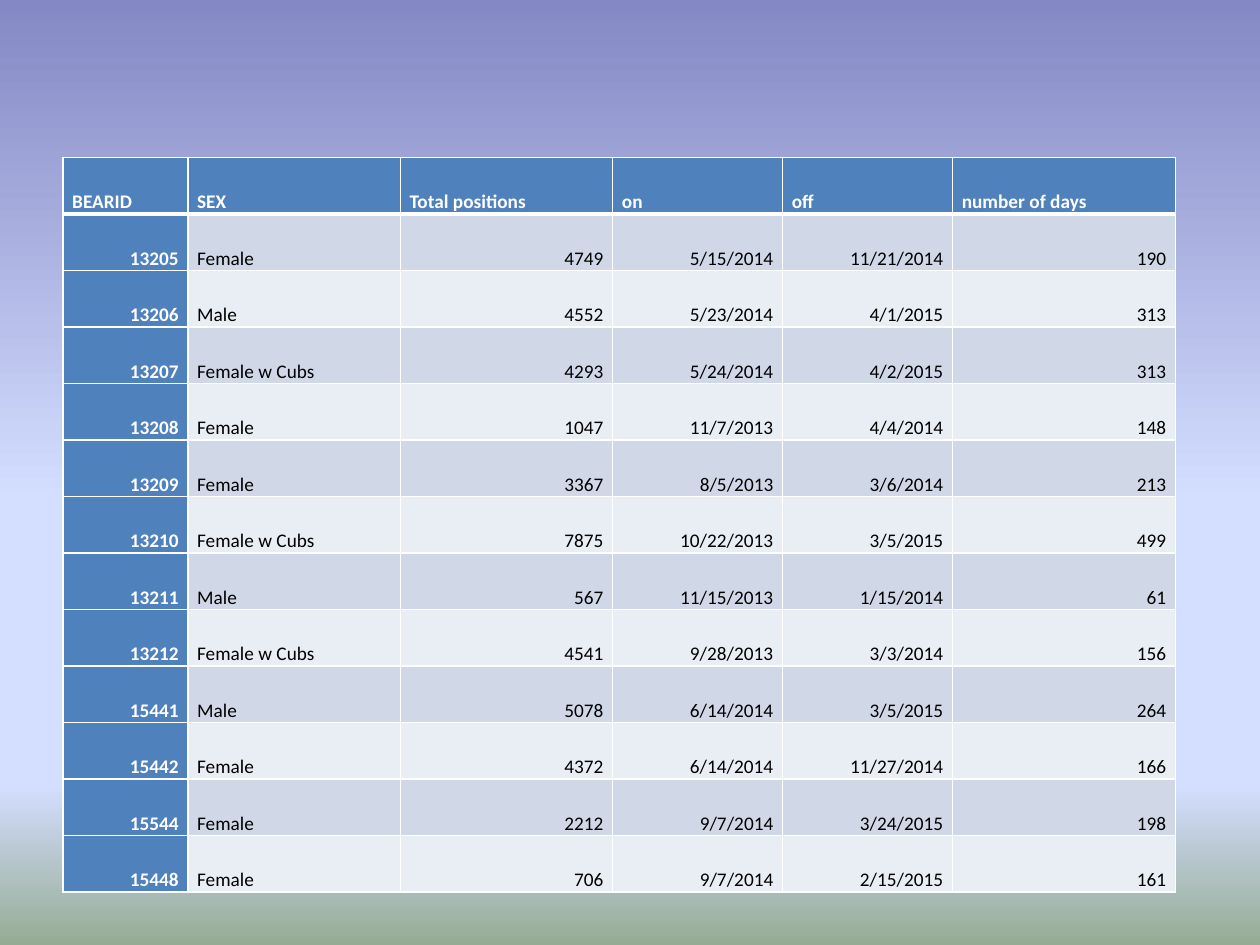
import dataclasses
import typing

import lxml.etree
import pptx
import pptx.dml.color
import pptx.enum.text
import pptx.oxml.ns
import pptx.util

Pt = pptx.util.Pt
qn = pptx.oxml.ns.qn
ALIGN = pptx.enum.text.PP_ALIGN


@dataclasses.dataclass(frozen=True)
class Theme:
    font: str = "Calibri"
    size: float = 11
    head: str = "4F81BD"
    bands: tuple = ("D0D8E8", "E9EDF4")
    light: str = "FFFFFF"
    dark: str = "000000"
    thin: float = 1
    thick: float = 3
    sky: tuple = ((0, "8488C4"), (53, "D4DEFF"), (83, "D4DEFF"), (100, "96AB94"))


class Bear(typing.NamedTuple):
    code: str
    sex: str
    total: str
    start: str
    end: str
    days: str


THEME = Theme()

# Table content and grid
HEADS = Bear("BEARID", "SEX", "Total positions", "on", "off", "number of days")
BEARS = [
    Bear("13205", "Female", "4749", "5/15/2014", "11/21/2014", "190"),
    Bear("13206", "Male", "4552", "5/23/2014", "4/1/2015", "313"),
    Bear("13207", "Female w Cubs", "4293", "5/24/2014", "4/2/2015", "313"),
    Bear("13208", "Female", "1047", "11/7/2013", "4/4/2014", "148"),
    Bear("13209", "Female", "3367", "8/5/2013", "3/6/2014", "213"),
    Bear("13210", "Female w Cubs", "7875", "10/22/2013", "3/5/2015", "499"),
    Bear("13211", "Male", "567", "11/15/2013", "1/15/2014", "61"),
    Bear("13212", "Female w Cubs", "4541", "9/28/2013", "3/3/2014", "156"),
    Bear("15441", "Male", "5078", "6/14/2014", "3/5/2015", "264"),
    Bear("15442", "Female", "4372", "6/14/2014", "11/27/2014", "166"),
    Bear("15544", "Female", "2212", "9/7/2014", "3/24/2015", "198"),
    Bear("15448", "Female", "706", "9/7/2014", "2/15/2015", "161"),
]
WIDTHS = (71.4, 121.4, 121.4, 97.1, 97.1, 127.4)
LEFT, TOP, HEIGHT = 36, 90, 32.3
INSET = 5.3


def rgb(code: str) -> pptx.dml.color.RGBColor:
    return pptx.dml.color.RGBColor.from_string(code)


def add_solid(node, tag: str, code: str, **attrs: str) -> None:
    """Append a tag that holds a solid fill, as used for cell borders."""
    line = lxml.etree.SubElement(node, qn(tag), **attrs)
    fill = lxml.etree.SubElement(line, qn("a:solidFill"))
    lxml.etree.SubElement(fill, qn("a:srgbClr"), val=code)


def write(frame, text: str, *, color: str, bold: bool, align) -> None:
    para = frame.paragraphs[0]
    para.alignment = align
    run = para.add_run()
    run.text = text
    font = run.font
    font.name, font.size, font.bold = THEME.font, Pt(THEME.size), bold
    font.color.rgb = rgb(color)


def paint_sky(slide) -> None:
    fill = slide.background.fill
    fill.gradient()
    fill.gradient_angle = 270
    stops = next(slide.element.iter(qn("a:gsLst")))
    for old in list(stops):
        stops.remove(old)
    for pos, code in THEME.sky:
        stop = lxml.etree.SubElement(stops, qn("a:gs"), pos=str(pos * 1000))
        lxml.etree.SubElement(stop, qn("a:srgbClr"), val=code)


def draw_cell(cell, text: str, row: int, col: int) -> None:
    key = row == 0 or col == 0
    # Borders, with a heavy rule under the header
    sides = {"a:lnL": False, "a:lnR": False, "a:lnT": row == 1, "a:lnB": row == 0}
    props = cell._tc.get_or_add_tcPr()
    for tag, heavy in sides.items():
        width = Pt(THEME.thick if heavy else THEME.thin)
        add_solid(props, tag, THEME.light, w=str(width))
    # Fill and text
    cell.fill.solid()
    cell.fill.fore_color.rgb = rgb(THEME.head if key else THEME.bands[(row - 1) % 2])
    cell.margin_left = cell.margin_right = Pt(INSET)
    cell.margin_top = cell.margin_bottom = Pt(0)
    cell.vertical_anchor = pptx.enum.text.MSO_ANCHOR.BOTTOM
    write(
        cell.text_frame,
        text,
        color=THEME.light if key else THEME.dark,
        bold=key,
        align=ALIGN.LEFT if row == 0 or col == 1 else ALIGN.RIGHT,
    )


def draw_table(slide, rows: list[Bear]) -> None:
    count = len(rows)
    table = slide.shapes.add_table(
        count, len(WIDTHS), Pt(LEFT), Pt(TOP), Pt(sum(WIDTHS)), Pt(HEIGHT * count)
    ).table
    table.first_col = True
    for column, width in zip(table.columns, WIDTHS):
        column.width = Pt(width)
    for r, bear in enumerate(rows):
        table.rows[r].height = Pt(HEIGHT)
        for c, text in enumerate(bear):
            draw_cell(table.cell(r, c), text, r, c)


def main() -> None:
    deck = pptx.Presentation()
    deck.slide_width, deck.slide_height = Pt(720), Pt(540)
    slide = deck.slides.add_slide(deck.slide_layouts[6])
    paint_sky(slide)
    draw_table(slide, [HEADS, *BEARS])
    deck.save("out.pptx")


if __name__ == "__main__":
    main()
